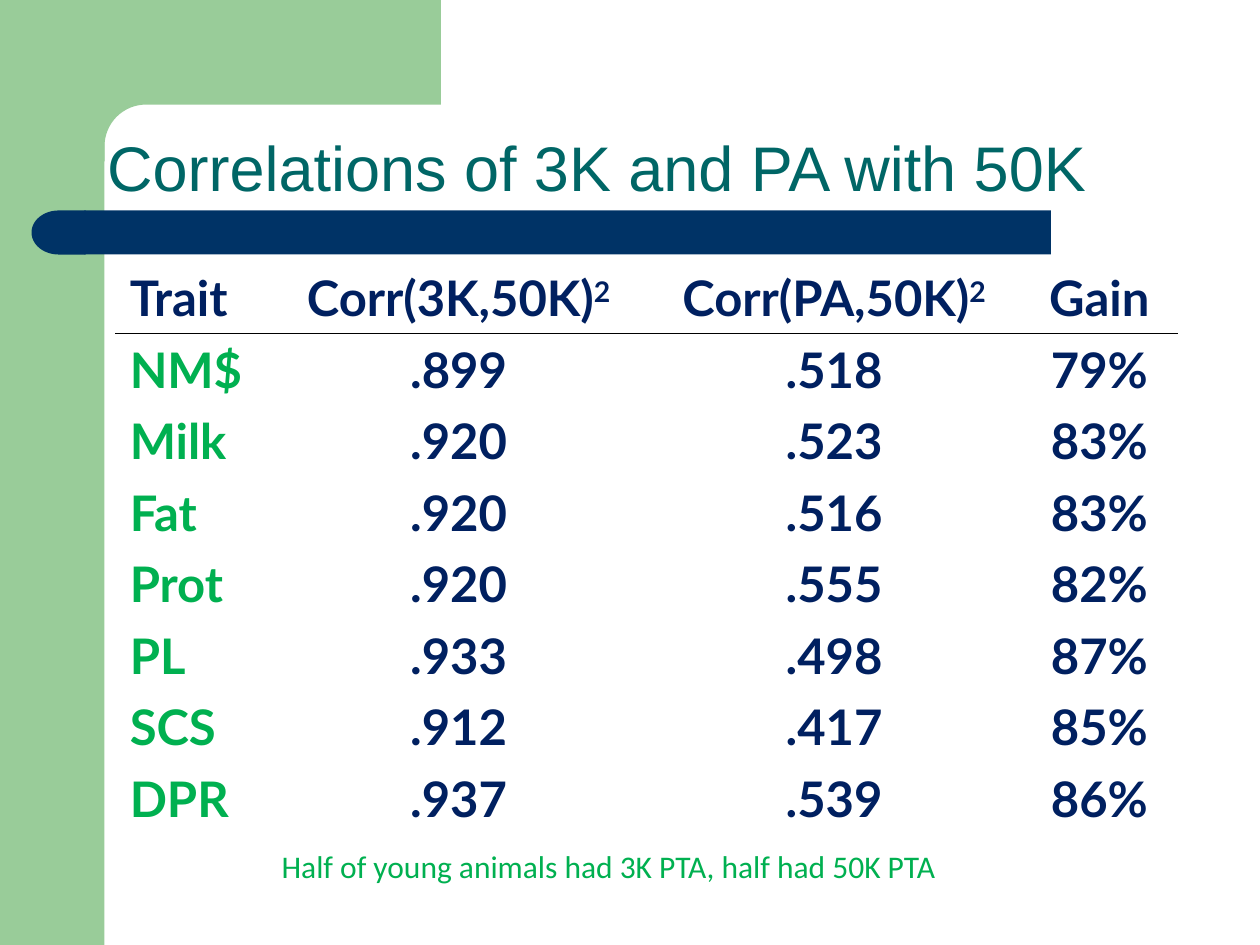
from dataclasses import dataclass
from math import cos, pi, sin

from lxml.etree import SubElement
from pptx import Presentation
from pptx.dml.color import RGBColor
from pptx.enum.shapes import MSO_SHAPE
from pptx.enum.text import MSO_ANCHOR, PP_ALIGN
from pptx.oxml.ns import qn
from pptx.util import Inches, Pt


@dataclass(frozen=True)
class Theme:
    sage: str = "99CC99"
    navy: str = "003366"
    teal: str = "006666"
    ink: str = "002060"
    green: str = "00B050"
    rule: str = "000000"
    title_font: str = "Arial"
    table_font: str = "Lato"
    note_font: str = "Calibri"
    title_size: int = 36
    table_size: int = 28
    note_size: int = 18


def write_text(frame, text, *, font, size, color, bold=False,
               align=PP_ALIGN.LEFT, anchor=MSO_ANCHOR.TOP):
    frame.word_wrap = True
    frame.vertical_anchor = anchor
    paragraph = frame.paragraphs[0]
    paragraph.alignment = align
    base, _, exponent = text.partition("^")
    for part in filter(None, (base, exponent)):
        run = paragraph.add_run()
        run.text = part
        run.font.name = font
        run.font.size = Pt(size)
        run.font.bold = bold
        run.font.color.rgb = RGBColor.from_string(color)
        if part is exponent:
            run.font._element.set("baseline", "30000")


def add_rule(cell, edge, color):
    properties = cell._tc.get_or_add_tcPr()
    line = SubElement(properties, qn(f"a:{edge}"), w=str(Pt(1)))
    fill = SubElement(line, qn("a:solidFill"))
    SubElement(fill, qn("a:srgbClr"), val=color)


class SlideBuilder:
    def __init__(self, slide, theme):
        self.slide = slide
        self.theme = theme

    def paint(self, shape, color):
        shape.shadow.inherit = False
        shape.fill.solid()
        shape.fill.fore_color.rgb = RGBColor.from_string(color)
        shape.line.fill.background()

    def block(self, preset, left, top, width, height, color, rotation=0):
        shape = self.slide.shapes.add_shape(
            preset, Inches(left), Inches(top), Inches(width), Inches(height))
        shape.rotation = rotation
        self.paint(shape, color)

    def outline(self, points, color):
        start, *rest = [(Inches(x), Inches(y)) for x, y in points]
        builder = self.slide.shapes.build_freeform(*start)
        builder.add_line_segments(rest, close=True)
        self.paint(builder.convert_to_shape(), color)

    def title(self, text, left, top, width, height):
        heading = self.slide.shapes.title
        heading.left, heading.top = Inches(left), Inches(top)
        heading.width, heading.height = Inches(width), Inches(height)
        write_text(heading.text_frame, text, font=self.theme.title_font,
                   size=self.theme.title_size, color=self.theme.teal,
                   anchor=MSO_ANCHOR.BOTTOM)
        heading.element.getparent().append(heading.element)

    def table(self, rows, left, top, widths, height):
        grid = self.slide.shapes.add_table(
            len(rows), len(widths), Inches(left), Inches(top),
            Inches(sum(widths)), Inches(height)).table
        grid.horz_banding = False
        for column, width in zip(grid.columns, widths):
            column.width = Inches(width)
        for r, row in enumerate(rows):
            for c, value in enumerate(row):
                cell = grid.cell(r, c)
                cell.margin_left = cell.margin_right = Inches(0.11)
                is_trait = r > 0 and c == 0
                write_text(cell.text_frame, value, bold=True,
                           font=self.theme.table_font,
                           size=self.theme.table_size,
                           color=self.theme.green if is_trait else self.theme.ink,
                           align=PP_ALIGN.CENTER if c else PP_ALIGN.LEFT)
                if r < 2:
                    add_rule(cell, "lnT" if r else "lnB", self.theme.rule)
                cell.fill.background()

    def note(self, text, left, top, width, height):
        box = self.slide.shapes.add_textbox(
            Inches(left), Inches(top), Inches(width), Inches(height))
        write_text(box.text_frame, text, font=self.theme.note_font,
                   size=self.theme.note_size, color=self.theme.green)


RESULTS = [
    ("Trait", "Corr(3K,50K)^2", "Corr(PA,50K)^2", "Gain"),
    ("NM$", ".899", ".518", "79%"),
    ("Milk", ".920", ".523", "83%"),
    ("Fat", ".920", ".516", "83%"),
    ("Prot", ".920", ".555", "82%"),
    ("PL", ".933", ".498", "87%"),
    ("SCS", ".912", ".417", "85%"),
    ("DPR", ".937", ".539", "86%"),
]


def main():
    presentation = Presentation()
    presentation.slide_width = Inches(10)
    presentation.slide_height = Inches(7.5)
    theme = Theme()
    slide = presentation.slides.add_slide(presentation.slide_layouts[5])
    page = SlideBuilder(slide, theme)

    page.block(MSO_SHAPE.RECTANGLE, 0, 0, 0.83, 7.5, theme.sage)
    edge, radius, steps = 0.83, 0.33, 16
    center = edge + radius
    angles = [pi / 2 * step / steps for step in range(steps + 1)]
    corner = [(center - radius * sin(a), center - radius * cos(a)) for a in angles]
    page.outline([(0.5, 0), (3.5, 0), (3.5, edge), *corner,
                  (edge, 1.28), (0.5, 1.28)], theme.sage)
    page.block(MSO_SHAPE.RECTANGLE, 0.67, 1.67, 7.67, 0.35, theme.navy)
    page.block(MSO_SHAPE.FLOWCHART_DELAY, 0.25, 1.67, 0.43, 0.35, theme.navy,
               rotation=180)

    page.title("Correlations of 3K and PA with 50K", 0.75, 0.42, 8.67, 1.25)
    page.table(RESULTS, 0.92, 2.08, (1.23, 2.98, 2.98, 1.23), 4.53)
    page.note(" Half of young animals had 3K PTA, half had 50K PTA",
              2.08, 6.67, 5.72, 0.4)
    presentation.save("out.pptx")


if __name__ == "__main__":
    main()
